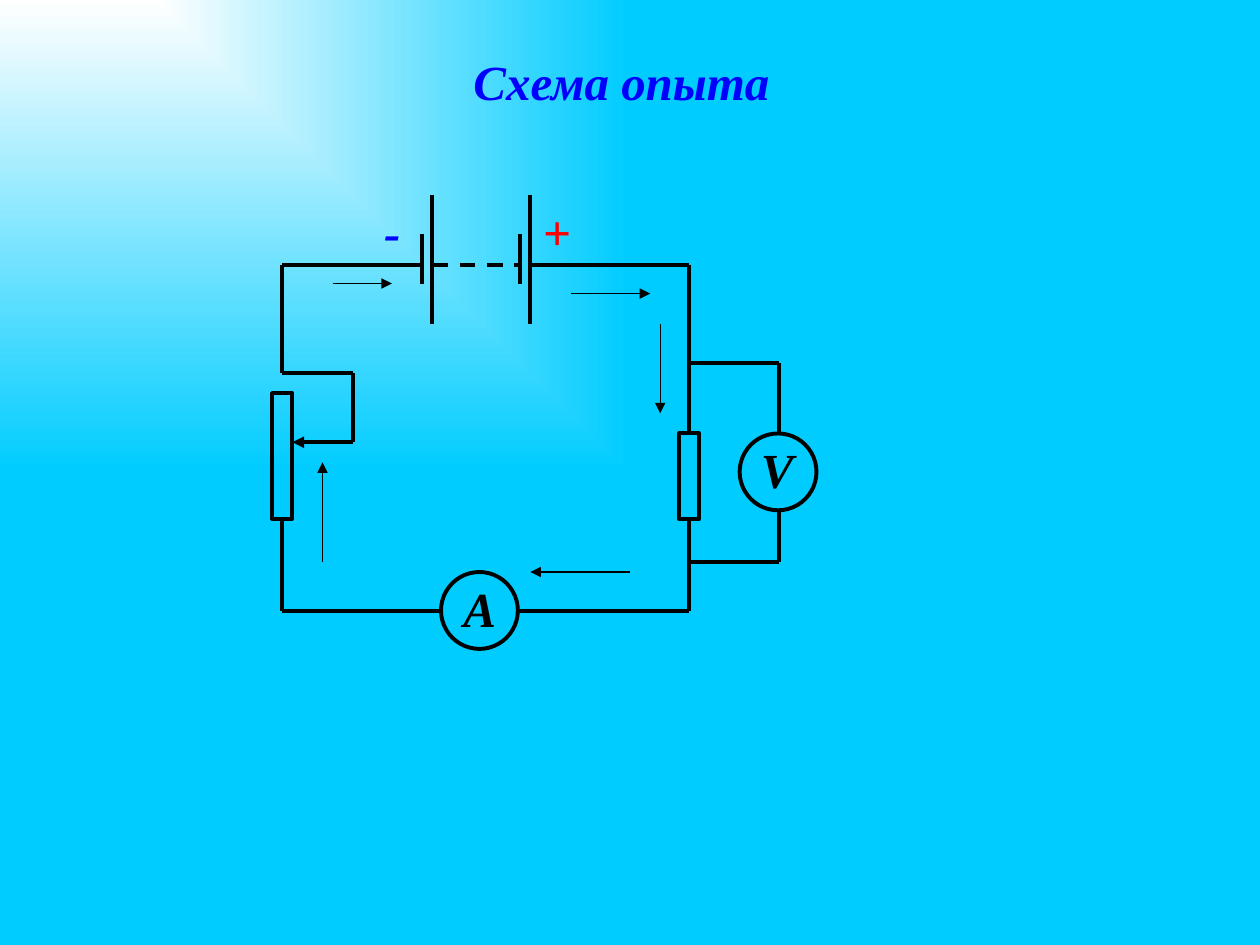
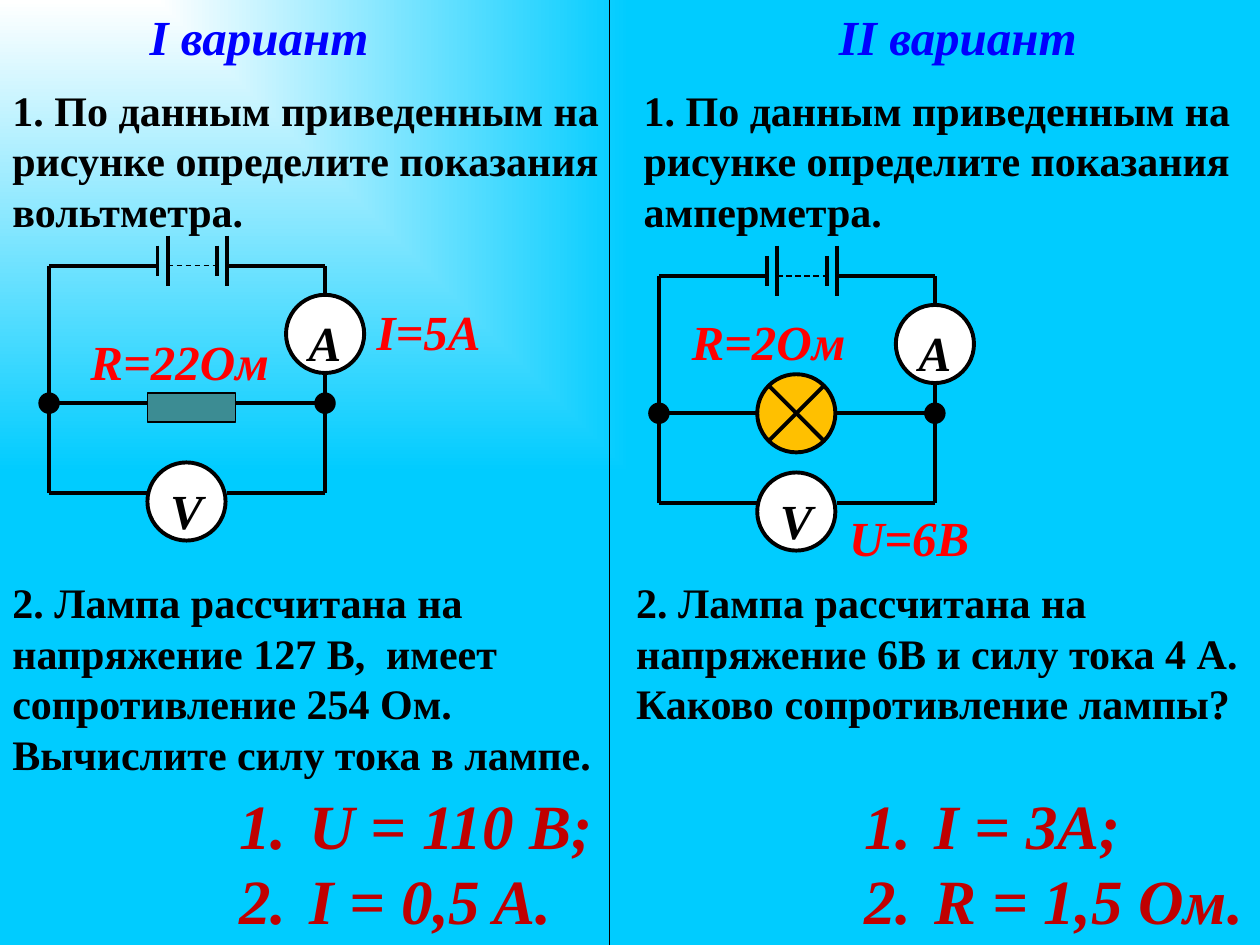
from itertools import pairwise

from pptx import Presentation
from pptx.dml.color import RGBColor
from pptx.enum import dml, shapes, text
from pptx.oxml import ns, xmlchemy
from pptx.util import Inches, Pt

BLACK = RGBColor(0x00, 0x00, 0x00)
WHITE = RGBColor(0xFF, 0xFF, 0xFF)
SKY = RGBColor(0x00, 0xCC, 0xFF)
BLUE = RGBColor(0x00, 0x00, 0xFF)
RED = RGBColor(0xFF, 0x00, 0x00)
DARK_RED = RGBColor(0xC0, 0x00, 0x00)
TEAL = RGBColor(0x3C, 0x8C, 0x93)
AMBER = RGBColor(0xFF, 0xC0, 0x00)

THICK, THIN = 2.25, 0.75
RECT, OVAL = shapes.MSO_SHAPE.RECTANGLE, shapes.MSO_SHAPE.OVAL
TITLE = dict(size=Pt(28), bold=True, italic=True, color=BLUE)
SYMBOL = TITLE | dict(color=BLACK)
VALUE = TITLE | dict(color=RED)
TASK = dict(size=Pt(24), bold=True, color=BLACK)
ANSWER = dict(size=Pt(36), bold=True, italic=True, color=DARK_RED)


def child(parent, tag, **attrs):
    """Append an XML element with the given attributes."""
    el = xmlchemy.OxmlElement(tag)
    for name, value in attrs.items():
        el.set(name, str(value))
    parent.append(el)
    return el


# Shared parts
def new_slide(prs):
    """Blank slide with a white glow spreading from the top left corner."""
    s = prs.slides.add_slide(prs.slide_layouts[6])
    fill = s.background.fill
    fill.gradient()
    for stop, color, position in zip(fill.gradient_stops, (WHITE, SKY), (0, 1)):
        stop.color.rgb = color
        stop.position = position
    grad = s.background._cSld.find(".//" + ns.qn("a:gradFill"))
    grad.remove(grad.find(ns.qn("a:lin")))
    glow = child(grad, "a:path", path="rect")
    child(glow, "a:fillToRect", r=100000, b=100000)
    return s


def write(p, words, fmt):
    r = p.add_run()
    r.text = words
    r.font.name = "Times New Roman"
    for name, value in fmt.items():
        if name == "color":
            r.font.color.rgb = value
        else:
            setattr(r.font, name, value)


def label(s, x, y, w, h, lines, fmt, numbered=False):
    tf = s.shapes.add_textbox(Inches(x), Inches(y), Inches(w), Inches(h)).text_frame
    tf.word_wrap = False
    tf.auto_size = text.MSO_AUTO_SIZE.SHAPE_TO_FIT_TEXT
    for i, words in enumerate(lines):
        p = tf.add_paragraph() if i else tf.paragraphs[0]
        write(p, words, fmt)
        if numbered:
            pPr = p._p.get_or_add_pPr()
            pPr.set("marL", str(Inches(0.56)))
            pPr.set("indent", str(-Inches(0.56)))
            child(pPr, "a:buFont", typeface="+mj-lt")
            child(pPr, "a:buAutoNum", type="arabicPeriod")


def line(s, start, end, width=THICK, dash=False, arrow=False):
    sp = s.shapes.add_connector(shapes.MSO_CONNECTOR.STRAIGHT,
                                *(Inches(v) for v in (*start, *end)))
    sp.line.color.rgb = BLACK
    sp.line.width = Pt(width)
    if dash:
        sp.line.dash_style = dml.MSO_LINE.DASH
    if arrow:
        child(sp.line._get_or_add_ln(), "a:tailEnd", type="triangle")
    child(sp._element.spPr, "a:effectLst")
    return sp


def wire(s, x, y, *points):
    """Run a wire through points relative to the circuit's corner."""
    return [line(s, a, b)
            for a, b in pairwise((x + px, y + py) for px, py in points)]


def part(s, kind, x, y, w, h, fill=None, width=THICK):
    sp = s.shapes.add_shape(kind, Inches(x), Inches(y), Inches(w), Inches(h))
    sp.shadow.inherit = False
    if fill is None:
        sp.fill.background()
    else:
        sp.fill.solid()
        sp.fill.fore_color.rgb = fill
    sp.line.color.rgb = BLACK
    sp.line.width = Pt(width)
    return sp


def battery(s, x, y, pitch, short, tall, dash_width):
    """Two cells, each a short and a tall plate, with a dashed link."""
    for cell in (x, x + pitch):
        for plate, (up, down) in ((cell, short), (cell + 0.08, tall)):
            line(s, (plate, y - up), (plate, y + down))
    line(s, (x + 0.08, y), (x + pitch, y), dash_width, dash=True)


# Slide 1: circuit of the experiment
def experiment_circuit(s, x, y):
    w, h = 3.23, 2.75
    battery(s, x + 1.11, y, 0.78, (0.24, 0.15), (0.55, 0.47), THICK)
    rheostat = part(s, RECT, x - 0.08, y + 1.02, 0.16, 1)
    resistor = part(s, RECT, x + w - 0.08, y + 1.34, 0.16, 0.68)

    # Main loop
    wire(s, x, y, (1.11, 0), (0, 0), (0, 0.86), (0.56, 0.86), (0.56, 1.41))
    line(s, (x + 0.56, y + 1.41), (x + 0.08, y + 1.41), arrow=True)
    down = wire(s, x, y, (1.97, 0), (w, 0), (w, 1.34))[-1]
    down.end_connect(resistor, 0)
    left = wire(s, x, y, (0, 2.02), (0, h), (1.26, h))[0]
    left.begin_connect(rheostat, 2)
    right = wire(s, x, y, (w, 2.02), (w, h), (1.87, h))[0]
    right.begin_connect(resistor, 2)

    # Voltmeter branch
    wire(s, x, y, (w, 0.78), (3.94, 0.78), (3.94, 1.33))
    wire(s, x, y, (w, 2.36), (3.94, 2.36), (3.94, 1.96))

    # Meters and battery poles
    for mx, my in ((1.26, 2.44), (3.63, 1.34)):
        part(s, OVAL, x + mx, y + my, 0.61, 0.61)
    for lx, ly, lw, words, fmt in (
            (1.34, 2.44, 0.46, "А", SYMBOL), (3.7, 1.34, 0.46, "V", SYMBOL),
            (1.97, -0.55, 0.42, "+", VALUE), (0.71, -0.55, 0.33, "-", TITLE)):
        label(s, x + lx, y + ly, lw, 0.57, [words], fmt)

    # Direction of the current
    for x1, y1, x2, y2 in ((2.29, 0.23, 2.92, 0.23), (3, 0.47, 3, 1.18),
                           (2.76, 2.44, 1.97, 2.44), (0.32, 2.36, 0.32, 1.57),
                           (0.4, 0.15, 0.87, 0.15)):
        line(s, (x + x1, y + y1), (x + x2, y + y2), THIN, arrow=True)


# Slide 2: two variants of the task
def meter(s, x, y, letter):
    tf = part(s, OVAL, x, y, 0.62, 0.62, WHITE).text_frame
    tf.word_wrap = False
    tf.vertical_anchor = text.MSO_ANCHOR.TOP
    tf.paragraphs[0].alignment = text.PP_ALIGN.CENTER
    write(tf.paragraphs[0], letter, SYMBOL)


def resistor_load(s, x, y):
    part(s, RECT, x, y - 0.08, 0.7, 0.23, TEAL, THIN)


def lamp_load(s, x, y):
    part(s, OVAL, x, y - 0.31, 0.62, 0.62, AMBER)
    for side in (-0.22, 0.22):
        line(s, (x + 0.31 + side, y - 0.22), (x + 0.31 - side, y + 0.22))


def task_circuit(s, x, y, load):
    w, middle, bottom = 2.19, 1.09, 1.8
    battery(s, x + 0.86, y, 0.47, (0.16, 0.08), (0.24, 0.16), THIN)
    wire(s, x, y, (0.86, 0), (0, 0), (0, bottom), (0.78, bottom))
    wire(s, x, y, (1.41, 0), (w, 0), (w, bottom), (1.41, bottom))
    wire(s, x, y, (0, middle), (0.78, middle))
    wire(s, x, y, (1.41, middle), (w, middle))
    for node in (x, x + w):
        part(s, OVAL, node - 0.08, y + middle - 0.08, 0.16, 0.16, BLACK, THIN)
    meter(s, x + 0.78, y + 1.56, "V")
    meter(s, x + 1.88, y + 0.23, "А")
    load(s, x + 0.78, y + middle)


def variant(s, title, circuit, values, tasks, answers):
    label(s, *title[:3], 0.57, [title[3]], TITLE)
    task_circuit(s, *circuit)
    for vx, vy, vw, words in values:
        label(s, vx, vy, vw, 0.57, [words], VALUE)
    for (tx, ty, tw, th), lines in tasks:
        label(s, tx, ty, tw, th, lines, TASK)
    ax, aw, lines = answers
    label(s, ax, 6.19, aw, 1.31, lines, ANSWER, numbered=True)


def main():
    prs = Presentation()
    prs.slide_width, prs.slide_height = Inches(10), Inches(7.5)

    s = new_slide(prs)
    label(s, 3.66, 0.36, 2.56, 0.57, ["Схема опыта"], TITLE)
    experiment_circuit(s, 2.24, 2.1)

    s = new_slide(prs)
    line(s, (4.84, 0), (4.84, 7.5), THIN)
    question = ["1. По данным приведенным на", "рисунке определите показания"]
    variant(
        s, (1.09, 0, 1.96, "I вариант"), (0.39, 2.11, resistor_load),
        [(2.89, 2.34, 1.04, "I=5A"), (0.62, 2.58, 1.63, "R=22Ом")],
        [((0, 0.62, 4.99, 1.31), question + ["вольтметра."]),
         ((0, 4.53, 4.84, 1.72),
          ["2. Лампа рассчитана на", "напряжение 127 В,  имеет",
           "сопротивление 254 Ом.", "Вычислите силу тока в лампе."])],
        (1.8, 3.03, ["U = 110 B;", "I = 0,5 A."]))
    variant(
        s, (6.56, 0, 2.11, "II вариант"), (5.23, 2.19, lamp_load),
        [(6.64, 3.98, 1.17, "U=6B"), (5.39, 2.42, 1.44, "R=2Ом")],
        [((5.01, 0.62, 4.99, 1.31), question + ["амперметра."]),
         ((4.95, 4.53, 5.05, 1.31),
          ["2. Лампа рассчитана на", "напряжение 6В и силу тока 4 А.",
           "Каково сопротивление лампы?"])],
        (6.76, 3.24, ["I = 3A;", "R = 1,5 Ом."]))

    prs.save("out.pptx")


if __name__ == "__main__":
    main()
